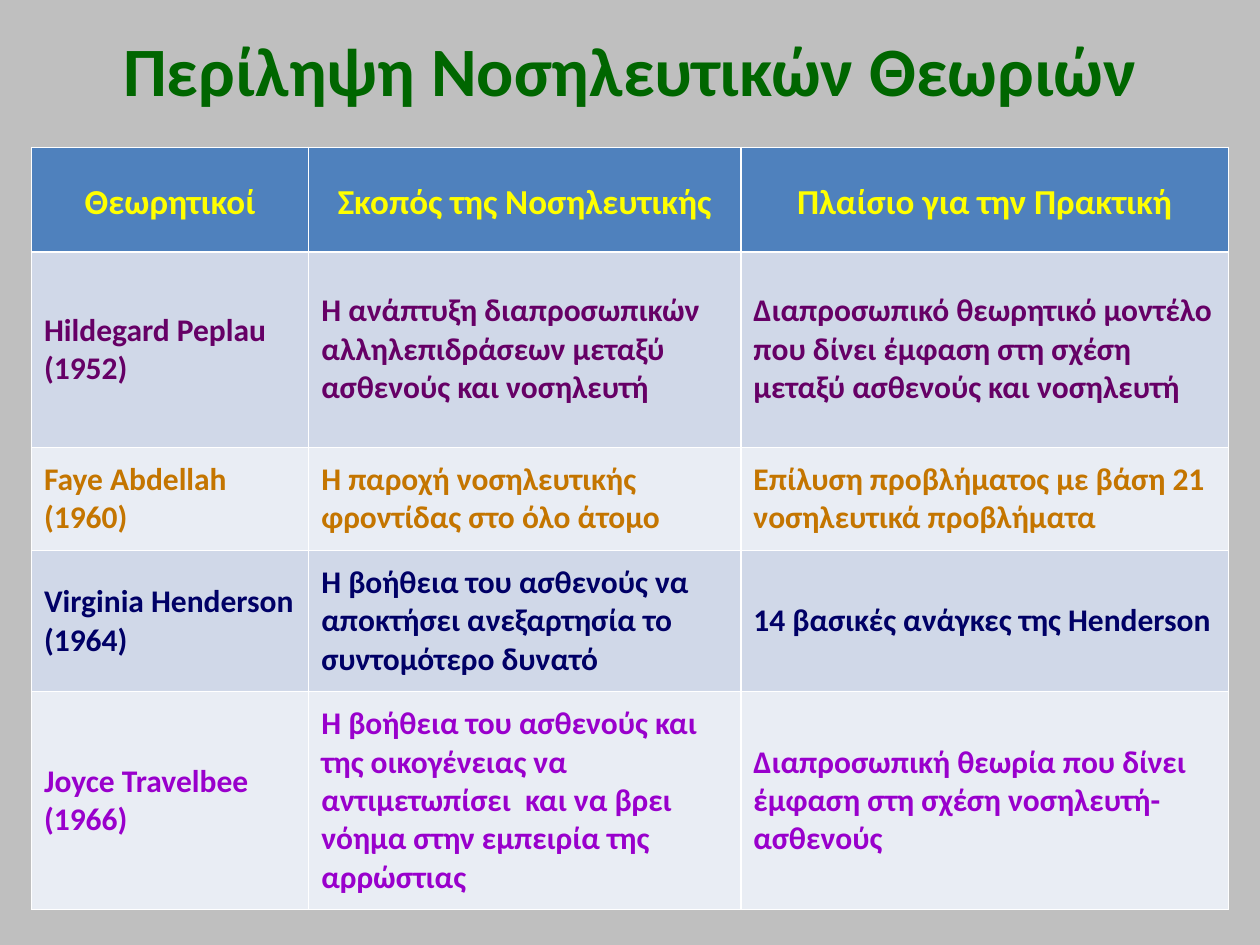
from pptx import Presentation
from pptx import util as u
from pptx.dml.color import RGBColor
from pptx.enum import text

GREY = RGBColor(0xBF, 0xBF, 0xBF)
GREEN = RGBColor(0x00, 0x66, 0x00)
YELLOW = RGBColor(0xFF, 0xFF, 0x00)
PLUM = RGBColor(0x66, 0x00, 0x66)
OCHRE = RGBColor(0xC4, 0x75, 0x00)
NAVY = RGBColor(0x00, 0x00, 0x66)
VIOLET = RGBColor(0x99, 0x00, 0xCC)
BLUE = RGBColor(0x4F, 0x81, 0xBD)
DARK = RGBColor(0xD0, 0xD8, 0xE8)
LIGHT = RGBColor(0xE9, 0xED, 0xF4)

CENTER = text.PP_ALIGN.CENTER
LEFT = text.PP_ALIGN.LEFT
MIDDLE = text.MSO_ANCHOR.MIDDLE

WIDTHS = [2.2, 3.43, 3.87]
ROWS = [
    (0.83, BLUE, YELLOW, ["Θεωρητικοί", "Σκοπός της Νοσηλευτικής", "Πλαίσιο για την Πρακτική"]),
    (1.55, DARK, PLUM, [
        "Hildegard Peplau (1952)",
        "Η ανάπτυξη διαπροσωπικών αλληλεπιδράσεων μεταξύ ασθενούς και νοσηλευτή",
        "Διαπροσωπικό θεωρητικό μοντέλο που δίνει έμφαση στη σχέση μεταξύ ασθενούς και νοσηλευτή"]),
    (0.82, LIGHT, OCHRE, [
        "Faye Abdellah (1960)",
        "Η παροχή νοσηλευτικής φροντίδας στο όλο άτομο",
        "Επίλυση προβλήματος με βάση 21 νοσηλευτικά προβλήματα"]),
    (1.12, DARK, NAVY, [
        "Virginia Henderson (1964)",
        "Η βοήθεια του ασθενούς να αποκτήσει ανεξαρτησία το συντομότερο δυνατό",
        "14 βασικές ανάγκες της Henderson"]),
    (1.73, LIGHT, VIOLET, [
        "Joyce Travelbee (1966)",
        "Η βοήθεια του ασθενούς και της οικογένειας να αντιμετωπίσει  και να βρει νόημα στην εμπειρία της αρρώστιας",
        "Διαπροσωπική θεωρία που δίνει έμφαση στη σχέση νοσηλευτή-ασθενούς"]),
]


def assign(item, values):
    for key, value in values.items():
        setattr(item, key, value)


def write(frame, words, size, color, align, lines):
    para = frame.paragraphs[0]
    assign(para, {"alignment": align, "line_spacing": lines})
    run = para.add_run()
    run.text = words
    assign(run.font, {"name": "Calibri", "size": u.Pt(size), "bold": True})
    run.font.color.rgb = color


deck = Presentation()
assign(deck, {"slide_width": u.Inches(10), "slide_height": u.Inches(7.5)})
slide = deck.slides.add_slide(deck.slide_layouts[5])
slide.background.fill.solid()
slide.background.fill.fore_color.rgb = GREY

title = slide.shapes.title
assign(title, {"left": u.Inches(0.5), "top": u.Inches(0.17),
               "width": u.Inches(9), "height": u.Inches(0.75)})
assign(title.text_frame, {"vertical_anchor": MIDDLE, "word_wrap": True,
                          "auto_size": text.MSO_AUTO_SIZE.NONE})
write(title.text_frame, "Περίληψη Νοσηλευτικών Θεωριών", 39.6, GREEN, CENTER, 1.0)

table = slide.shapes.add_table(
    len(ROWS), len(WIDTHS), u.Inches(0.25), u.Inches(1.17),
    u.Inches(sum(WIDTHS)), u.Inches(sum(row[0] for row in ROWS))).table
for column, width in zip(table.columns, WIDTHS):
    column.width = u.Inches(width)

sides = ["margin_left", "margin_top", "margin_right", "margin_bottom"]
inset = dict.fromkeys(sides, u.Inches(0.1))
for r, (height, fill, color, words) in enumerate(ROWS):
    table.rows[r].height = u.Inches(height)
    size, align, lines = (18, LEFT, 1.0) if r else (20, CENTER, 1.15)
    for c, word in enumerate(words):
        cell = table.cell(r, c)
        assign(cell, {"vertical_anchor": MIDDLE, **inset})
        cell.fill.solid()
        cell.fill.fore_color.rgb = fill
        write(cell.text_frame, word, size, color, align, lines)

deck.save("out.pptx")
